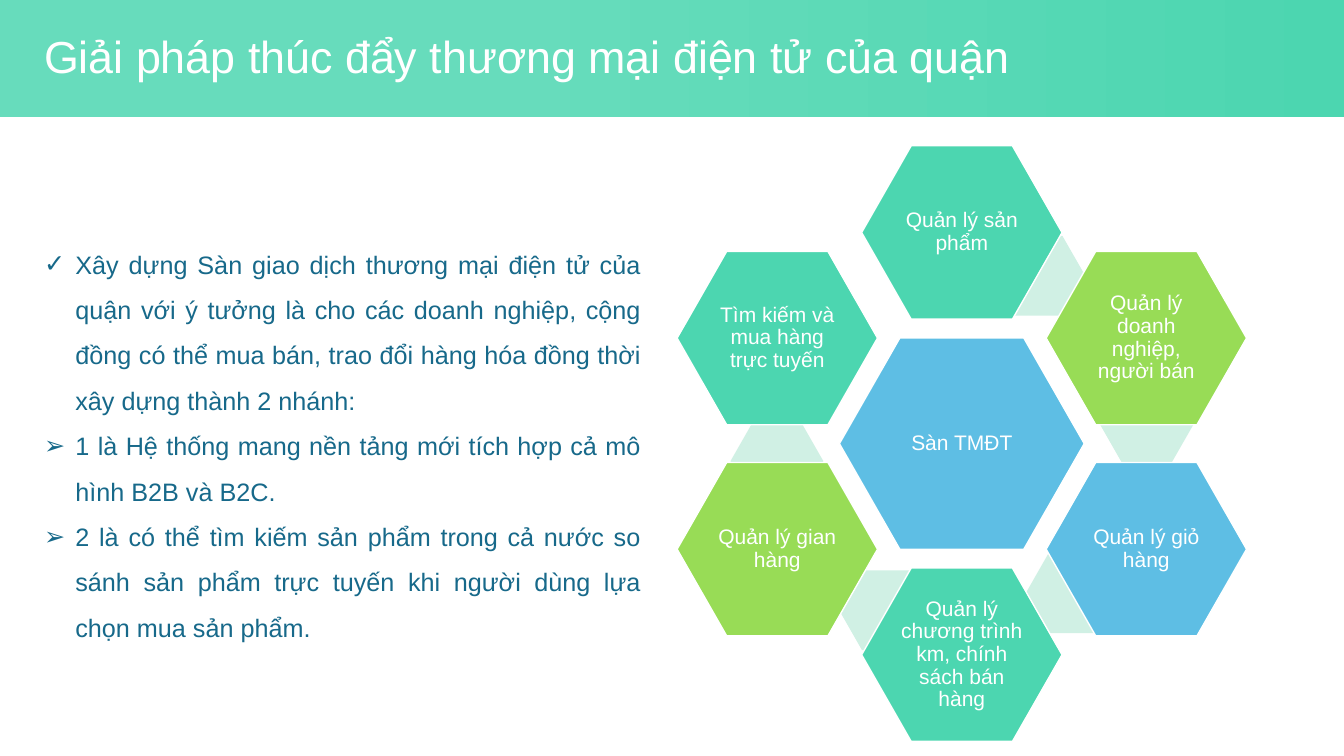
from lxml import etree
from pptx import Presentation
from pptx import util as u
from pptx.dml import color
from pptx.enum import shapes, text
from pptx.oxml import ns

COLORS = {
    "white": "FFFFFF", "ink": "17698A", "link": "D0F0E4", "mint": "4CD6B0",
    "pale_mint": "67DCBC", "lime": "98DC56", "blue": "5EBEE4",
}
FONT = "Arial"
TITLE = "Giải pháp thúc đẩy thương mại điện tử của quận"
POINTS = [
    ("✓", "Xây dựng Sàn giao dịch thương mại điện tử của quận với ý tưởng là cho các doanh nghiệp, "
          "cộng đồng có thể mua bán, trao đổi hàng hóa đồng thời xây dựng thành 2 nhánh:"),
    ("➢", "1 là Hệ thống mang nền tảng mới tích hợp cả mô hình B2B và B2C."),
    ("➢", "2 là có thể tìm kiếm sản phẩm trong cả nước so sánh sản phẩm trực tuyến "
          "khi người dùng lựa chọn mua sản phẩm."),
]
HUB = "Sàn TMĐT"
RING = [
    ("Quản lý sản phẩm", "mint", 0, -2),
    ("Quản lý doanh nghiệp, người bán", "lime", 1, -1),
    ("Quản lý giỏ hàng", "blue", 1, 1),
    ("Quản lý chương trình km, chính sách bán hàng", "mint", 0, 2),
    ("Quản lý gian hàng", "lime", -1, 1),
    ("Tìm kiếm và mua hàng trực tuyến", "mint", -1, -1),
]
LINKS = [(1.94, -4.23), (4.66, -0.47), (2.78, 3.77), (-1.92, 4.2), (-4.66, 0.44)]
CENTER_X, CENTER_Y = 24.24, 11.18
COLUMN_STEP, ROW_STEP = 4.65, 2.66
HUB_SIZE, RING_SIZE, LINK_SIZE = (6.17, 5.33), (5.05, 4.37), (2.34, 2.01)


def rgb(name):
    return color.RGBColor.from_string(COLORS[name])


def style(paragraph, size, color_name, spacing):
    paragraph.line_spacing = spacing
    for run in paragraph.runs:
        run.font.name = FONT
        run.font.size = u.Pt(size)
        run.font.color.rgb = rgb(color_name)


def add_textbox(slide, left, top, width, height):
    frame = slide.shapes.add_textbox(u.Cm(left), u.Cm(top), u.Cm(width), u.Cm(height)).text_frame
    frame.word_wrap = True
    return frame


def add_hexagon(slide, dx, dy, size, color_name, label=None):
    width, height = size
    shape = slide.shapes.add_shape(
        shapes.MSO_SHAPE.HEXAGON,
        u.Cm(CENTER_X + dx - width / 2), u.Cm(CENTER_Y + dy - height / 2),
        u.Cm(width), u.Cm(height))
    shape.shadow.inherit = False
    shape.adjustments[0] = 0.286
    shape.fill.solid()
    shape.fill.fore_color.rgb = rgb(color_name)
    if label is None:
        shape.line.fill.background()
        return
    shape.line.color.rgb = rgb("white")
    shape.line.width = u.Pt(1)
    frame = shape.text_frame
    frame.text = label
    frame.word_wrap = True
    frame.vertical_anchor = text.MSO_ANCHOR.MIDDLE
    frame.margin_left = frame.margin_right = u.Cm(0.05)
    frame.margin_top = frame.margin_bottom = u.Cm(0.05)
    frame.paragraphs[0].alignment = text.PP_ALIGN.CENTER
    style(frame.paragraphs[0], 15, "white", 0.9)


def add_banner(slide, width):
    banner = slide.shapes.add_shape(shapes.MSO_SHAPE.RECTANGLE, 0, 0, width, u.Cm(2.95))
    banner.shadow.inherit = False
    banner.line.fill.background()
    banner.fill.gradient()
    banner.fill.gradient_angle = 0
    for stop, position, name in zip(banner.fill.gradient_stops, (0.38, 1), ("pale_mint", "mint")):
        stop.position = position
        stop.color.rgb = rgb(name)
    frame = add_textbox(slide, 0.86, 0.48, 32.16, 2.01)
    frame.vertical_anchor = text.MSO_ANCHOR.MIDDLE
    frame.text = TITLE
    style(frame.paragraphs[0], 32, "white", 0.9)


def add_points(slide):
    frame = add_textbox(slide, 0.86, 5.77, 15.54, 10.49)
    frame.text = "\n".join(point for _, point in POINTS)
    for paragraph, (mark, _) in zip(frame.paragraphs, POINTS):
        paragraph.alignment = text.PP_ALIGN.JUSTIFY
        properties = paragraph._p.get_or_add_pPr()
        properties.set("marL", str(u.Cm(0.79)))
        properties.set("indent", str(u.Cm(-0.79)))
        etree.SubElement(properties, ns.qn("a:buFont")).set("typeface", FONT)
        etree.SubElement(properties, ns.qn("a:buChar")).set("char", mark)
        style(paragraph, 18, "ink", 1.5)


def main():
    presentation = Presentation()
    presentation.slide_width = u.Cm(33.87)
    presentation.slide_height = u.Cm(19.05)
    slide = presentation.slides.add_slide(presentation.slide_layouts[6])
    add_banner(slide, presentation.slide_width)
    add_points(slide)
    add_hexagon(slide, 0, 0, HUB_SIZE, "blue", HUB)
    for dx, dy in LINKS:
        add_hexagon(slide, dx, dy, LINK_SIZE, "link")
    for label, color_name, column, row in RING:
        add_hexagon(slide, column * COLUMN_STEP, row * ROW_STEP, RING_SIZE, color_name, label)
    presentation.save("out.pptx")


if __name__ == "__main__":
    main()
